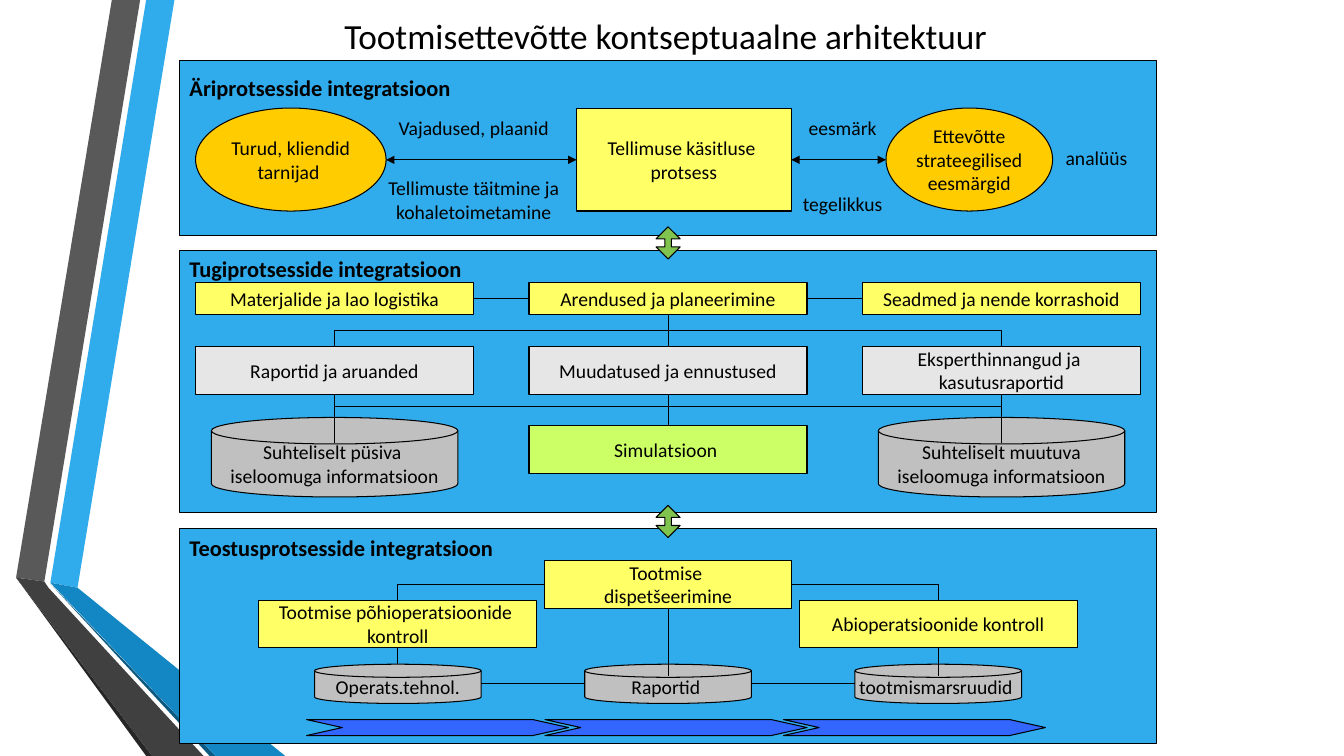
import pptx
import pptx.dml.color
import pptx.enum.shapes
import pptx.enum.text
import pptx.oxml
import pptx.oxml.ns
import pptx.util

Pt = pptx.util.Pt
SHAPE = pptx.enum.shapes.MSO_SHAPE
CONNECTOR = pptx.enum.shapes.MSO_CONNECTOR
ALIGN = pptx.enum.text.PP_ALIGN
ANCHOR = pptx.enum.text.MSO_ANCHOR

FONT = "Calibri"
BLACK, BLUE, YELLOW, ORANGE = "000000", "30ACEC", "FFFF66", "FFCC00"
LIGHT_GREY, GREY, LIME, GREEN, INDIGO = "E6E6E6", "C0C0C0", "CCFF66", "80C34F", "3366FF"

# Column centres of the support and execution panels
SUPPORT_COLUMNS = [239 + 238.2 * column for column in range(3)]
EXECUTION_COLUMNS = [284.2 + 193 * column for column in range(3)]
MIDDLE = SUPPORT_COLUMNS[1]

RIBBONS = [
    ("30ACEC", [(36, 416.2), (55.4, 419.8), (124.6, 0), (104.4, 0)]),
    ("595959", [(100.1, 0), (79.9, 0), (11.5, 412.6), (31.7, 415.4)]),
    ("262626", [(11.5, 412.6), (104.4, 540), (108.7, 540)]),
    ("0C5A82", [(36, 416.9), (149.8, 540), (154.1, 540)]),
    ("1287C3", [(36, 416.2), (154.1, 540), (203.8, 540), (55.4, 419.8)]),
    ("404040", [(145.4, 540), (34.6, 419.8), (31.7, 415.4), (11.5, 412.6), (108.7, 540)]),
]


def color(hex_string):
    return pptx.dml.color.RGBColor.from_string(hex_string)


def paint(shape, fill):
    shape.shadow.inherit = False
    shape.fill.solid()
    shape.fill.fore_color.rgb = color(fill)


def write(text_frame, text, size=14, bold=False, align=ALIGN.CENTER):
    for index, line in enumerate(text.split("\n")):
        paragraph = text_frame.paragraphs[0] if index == 0 else text_frame.add_paragraph()
        paragraph.alignment = align
        run = paragraph.add_run()
        run.text = line
        run.font.name = FONT
        run.font.size = Pt(size)
        run.font.bold = bold
        run.font.color.rgb = color(BLACK)


def add_title(slide, text):
    title = slide.shapes.title
    title.left, title.top, title.width, title.height = Pt(156), Pt(3.6), Pt(648), Pt(34.6)
    frame = title.text_frame
    frame.auto_size = pptx.enum.text.MSO_AUTO_SIZE.NONE
    frame.vertical_anchor = ANCHOR.TOP
    frame.margin_top, frame.margin_bottom, frame.margin_right = Pt(6.7), 0, Pt(16)
    write(frame, text, 25.2)


def add_ribbon(slide, fill, points):
    points = [(Pt(x), Pt(y)) for x, y in points]
    builder = slide.shapes.build_freeform(*points[0])
    builder.add_line_segments(points[1:], close=True)
    ribbon = builder.convert_to_shape()
    paint(ribbon, fill)
    ribbon.line.fill.background()


def add_box(slide, kind, left, top, width, height, fill, text="", adjustments=()):
    shape = slide.shapes.add_shape(kind, Pt(left), Pt(top), Pt(width), Pt(height))
    paint(shape, fill)
    shape.line.color.rgb = color(BLACK)
    shape.line.width = Pt(0.75)
    for index, value in enumerate(adjustments):
        shape.adjustments[index] = value
    if text:
        shape.text_frame.word_wrap = False
        shape.text_frame.vertical_anchor = ANCHOR.MIDDLE
        write(shape.text_frame, text)
    return shape


def add_centred_box(slide, kind, centre, top, width, height, fill, text):
    return add_box(slide, kind, centre - width / 2, top, width, height, fill, text)


def add_panel(slide, top, height, heading, margin_top):
    panel = add_box(slide, SHAPE.RECTANGLE, 128.3, top, 697.6, height, BLUE)
    frame = panel.text_frame
    frame.word_wrap = True
    frame.vertical_anchor = ANCHOR.TOP
    frame.margin_top = Pt(margin_top)
    write(frame, heading, 16, True, ALIGN.LEFT)


def add_label(slide, left, top, width, height, text):
    label = slide.shapes.add_textbox(Pt(left), Pt(top), Pt(width), Pt(height))
    label.text_frame.word_wrap = True
    write(label.text_frame, text)


def add_line(slide, x1, y1, x2, y2, kind=CONNECTOR.STRAIGHT, arrows=False):
    line = slide.shapes.add_connector(kind, Pt(x1), Pt(y1), Pt(x2), Pt(y2))
    line.line.color.rgb = color(BLACK)
    line.line.width = Pt(0.75)
    properties = line._element.spPr
    pptx.oxml.ns.qn("a:effectLst")
    properties.append(pptx.oxml.parse_xml(
        f'<a:effectLst {pptx.oxml.ns.nsdecls("a")}/>'))
    if arrows:
        for end in ("headEnd", "tailEnd"):
            properties.find(pptx.oxml.ns.qn("a:ln")).append(pptx.oxml.parse_xml(
                f'<a:{end} {pptx.oxml.ns.nsdecls("a")} type="triangle"/>'))
    return line


def add_corner(slide, x1, y1, x2, y2):
    """Connector that runs sideways, then down."""
    line = add_line(slide, x1, y1, x2, y2, CONNECTOR.ELBOW)
    line._element.spPr.find(pptx.oxml.ns.qn("a:prstGeom")).set("prst", "bentConnector2")


def add_branch(slide, x1, y1, x2, y2, bend):
    """Connector that runs down, sideways and down again, as a turned elbow."""
    x, y = (x1 + x2) / 2, (y1 + y2) / 2
    half_run, half_drop = abs(x2 - x1) / 2, (y2 - y1) / 2
    side = 1 if x2 > x1 else -1
    line = add_line(slide, x + side * half_drop, y - half_run,
                    x - side * half_drop, y + half_run, CONNECTOR.ELBOW)
    properties = line._element.spPr
    turn = 270 if side > 0 else 90
    properties.find(pptx.oxml.ns.qn("a:xfrm")).set("rot", str(turn * 60000))
    geometry = properties.find(pptx.oxml.ns.qn("a:prstGeom"))
    for child in list(geometry):
        geometry.remove(child)
    geometry.append(pptx.oxml.parse_xml(
        f'<a:avLst {pptx.oxml.ns.nsdecls("a")}>'
        f'<a:gd name="adj1" fmla="val {round(bend * 100000)}"/></a:avLst>'))


def add_business_panel(slide):
    add_panel(slide, 43.2, 124.9, "Äriprotsesside integratsioon", 10)
    add_box(slide, SHAPE.OVAL, 139.7, 77.2, 136.1, 73.6, ORANGE, "Turud, kliendid\ntarnijad ")
    add_box(slide, SHAPE.OVAL, 632.9, 77.2, 119, 73.6, ORANGE,
            "Ettevõtte\nstrateegilised\neesmärgid")
    add_box(slide, SHAPE.RECTANGLE, 411.8, 77.2, 153.4, 73.6, YELLOW,
            "Tellimuse käsitluse \nprotsess")
    add_line(slide, 565.2, 114.2, 632.9, 114.2, arrows=True)
    add_line(slide, 411.8, 114.2, 275.8, 114.2, arrows=True)
    add_label(slide, 746.6, 100.4, 73.4, 23.8, "analüüs")
    add_label(slide, 559.4, 79.2, 85, 23.8, "eesmärk")
    add_label(slide, 553.7, 133.9, 96.5, 23.8, "tegelikkus")
    add_label(slide, 253.4, 122.4, 170, 41, "Tellimuste täitmine ja kohaletoimetamine")
    add_label(slide, 253.4, 79.2, 170, 23.8, "Vajadused, plaanid")


def add_support_panel(slide):
    add_panel(slide, 179, 187.2, "Tugiprotsesside integratsioon", 3)
    functions = ["Materjalide ja lao logistika", "Arendused ja planeerimine",
                 "Seadmed ja nende korrashoid"]
    reports = ["Raportid ja aruanded", "Muudatused ja ennustused",
               "Eksperthinnangud ja \nkasutusraportid"]
    for centre, function, report in zip(SUPPORT_COLUMNS, functions, reports):
        add_centred_box(slide, SHAPE.RECTANGLE, centre, 202, 198.6, 22.6, YELLOW, function)
        add_centred_box(slide, SHAPE.RECTANGLE, centre, 247.5, 198.6, 34, LIGHT_GREY, report)
    add_centred_box(slide, SHAPE.RECTANGLE, MIDDLE, 304, 198.6, 34, LIME, "Simulatsioon ")
    stores = ["Suhteliselt püsiva \niseloomuga informatsioon",
              "Suhteliselt muutuva\niseloomuga informatsioon"]
    for centre, store in zip(SUPPORT_COLUMNS[::2], stores):
        add_centred_box(slide, SHAPE.FLOWCHART_MAGNETIC_DISK, centre, 298.2, 176, 56.8, GREY, store)
        add_branch(slide, MIDDLE, 224.6, centre, 247.5, 0.49)
        add_branch(slide, MIDDLE, 281.5, centre, 316.2, 0.25)
        add_line(slide, centre, 281.5, centre, 316.2)
    for centre in SUPPORT_COLUMNS[:2]:
        add_line(slide, centre + 99.3, 213.2, centre + 138.9, 213.2)
    add_line(slide, MIDDLE, 224.6, MIDDLE, 247.5)
    add_line(slide, MIDDLE, 281.5, MIDDLE, 304)


def add_execution_panel(slide):
    add_panel(slide, 377.8, 153.6, "Teostusprotsesside integratsioon", 3.5)
    for column in range(3):
        add_box(slide, SHAPE.CHEVRON, 219 + 170.3 * column, 514, 187.2, 11.4, INDIGO,
                adjustments=[2.24])
    for centre, store in zip(EXECUTION_COLUMNS,
                             ["Operats.tehnol.", "Raportid ", "tootmismarsruudid "]):
        add_centred_box(slide, SHAPE.FLOWCHART_MAGNETIC_DISK, centre, 474.5, 119, 28, GREY, store)
    left, middle, right = EXECUTION_COLUMNS
    controls = ["Tootmise põhioperatsioonide \nkontroll", "Abioperatsioonide kontroll"]
    for centre, side, control in zip((left, right), (-1, 1), controls):
        add_centred_box(slide, SHAPE.RECTANGLE, centre, 428.6, 198.6, 34, YELLOW, control)
        add_corner(slide, middle + side * 88, 417.4, centre, 428.6)
    add_centred_box(slide, SHAPE.RECTANGLE, middle, 400.4, 176, 34, YELLOW,
                    "Tootmise \ndispetšeerimine")
    add_line(slide, left, 462.6, left, 474.5)
    add_line(slide, middle, 434.4, middle, 483.1)
    add_line(slide, right, 462.6, right, 483.1)
    for centre in (left, middle):
        add_line(slide, centre + 59.5, 488.3, centre + 133.5, 488.3)


def main():
    presentation = pptx.Presentation()
    presentation.slide_width, presentation.slide_height = Pt(960), Pt(540)
    slide = presentation.slides.add_slide(presentation.slide_layouts[5])
    for fill, points in RIBBONS:
        add_ribbon(slide, fill, points)
    add_title(slide, "Tootmisettevõtte kontseptuaalne arhitektuur")
    add_business_panel(slide)
    add_support_panel(slide)
    add_execution_panel(slide)
    # Arrows between the panels
    for top in (162, 361):
        add_box(slide, SHAPE.UP_DOWN_ARROW, MIDDLE - 8.6, top, 17.2, 23, GREEN,
                adjustments=[0.5, 0.27])
    presentation.save("out.pptx")


if __name__ == "__main__":
    main()
